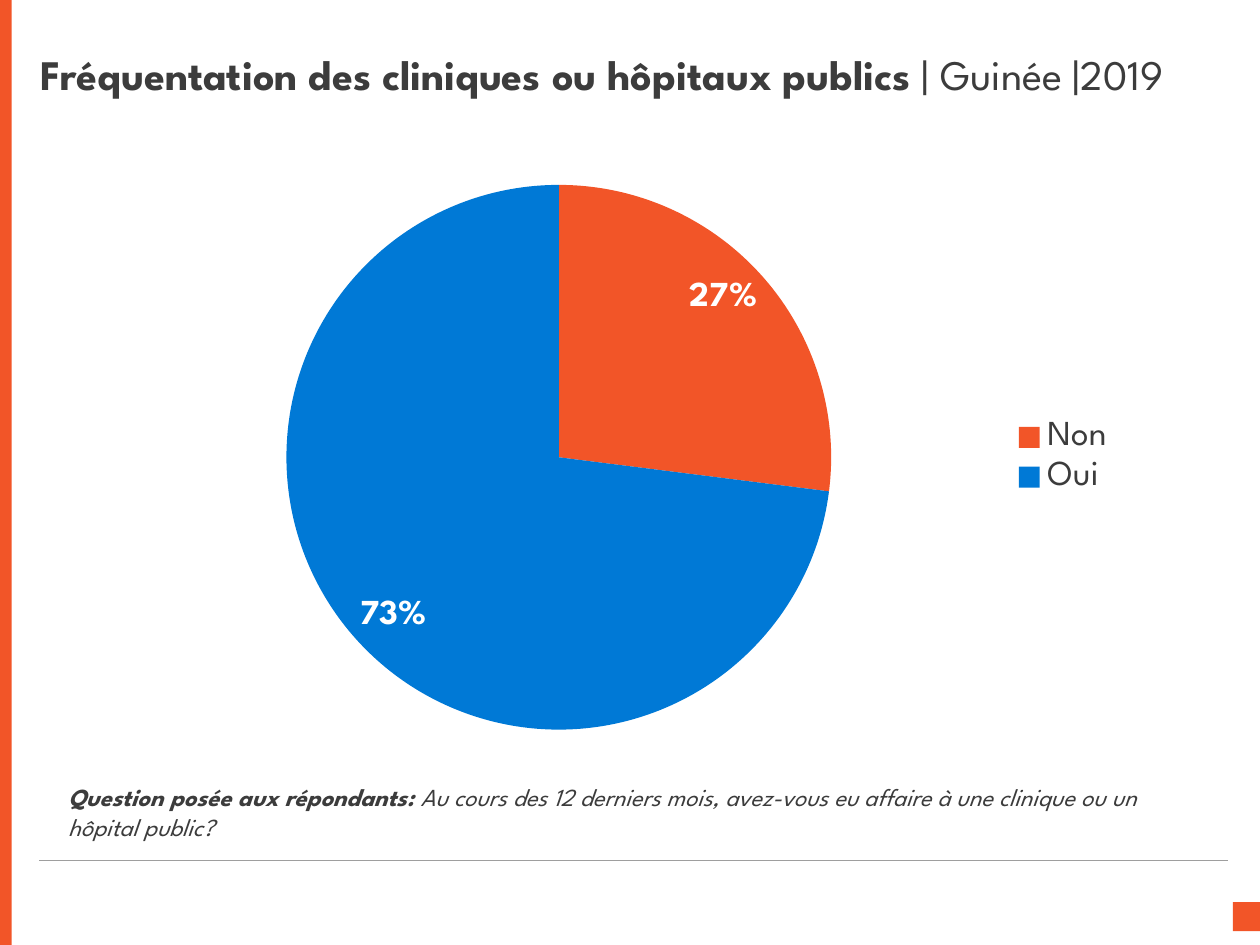
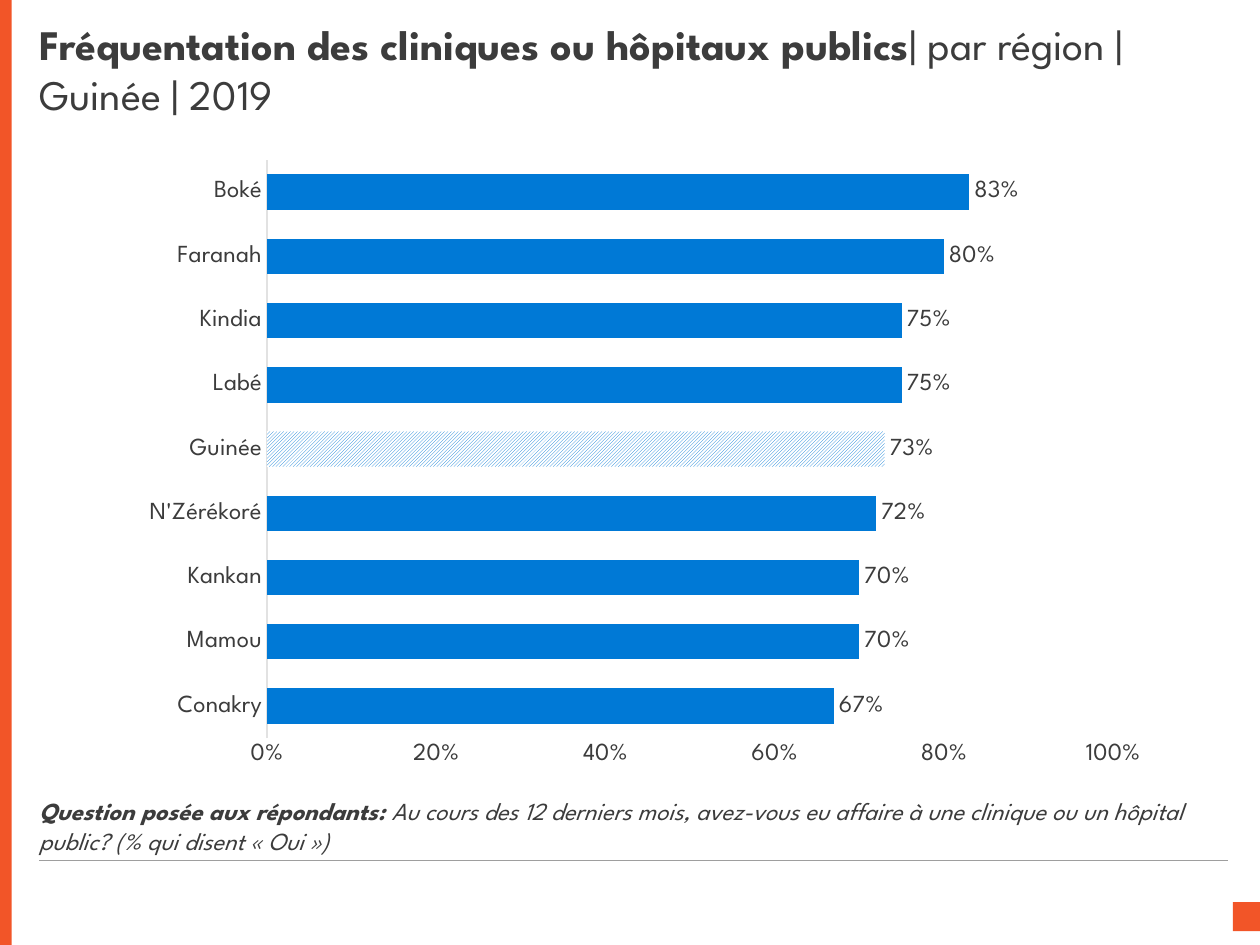
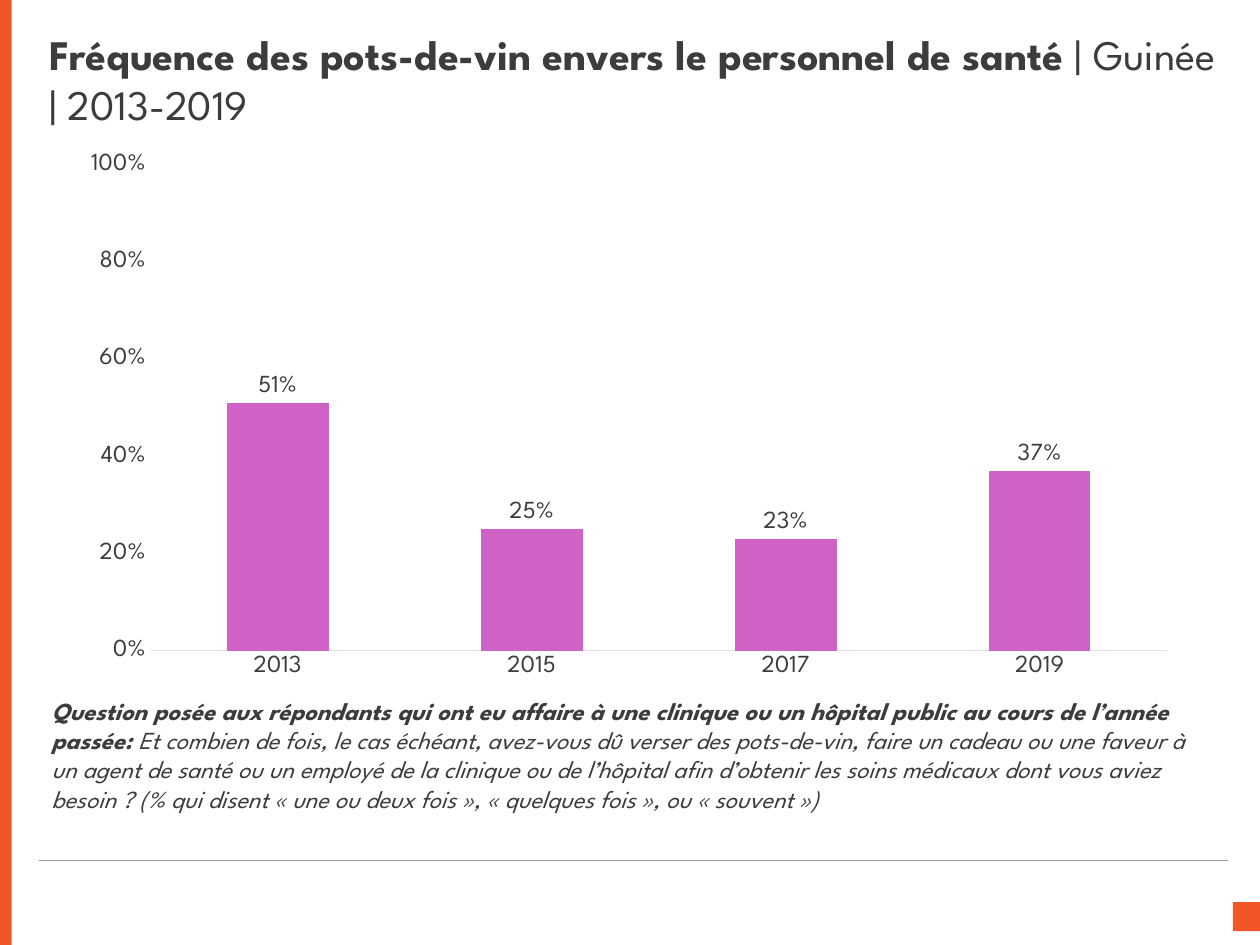
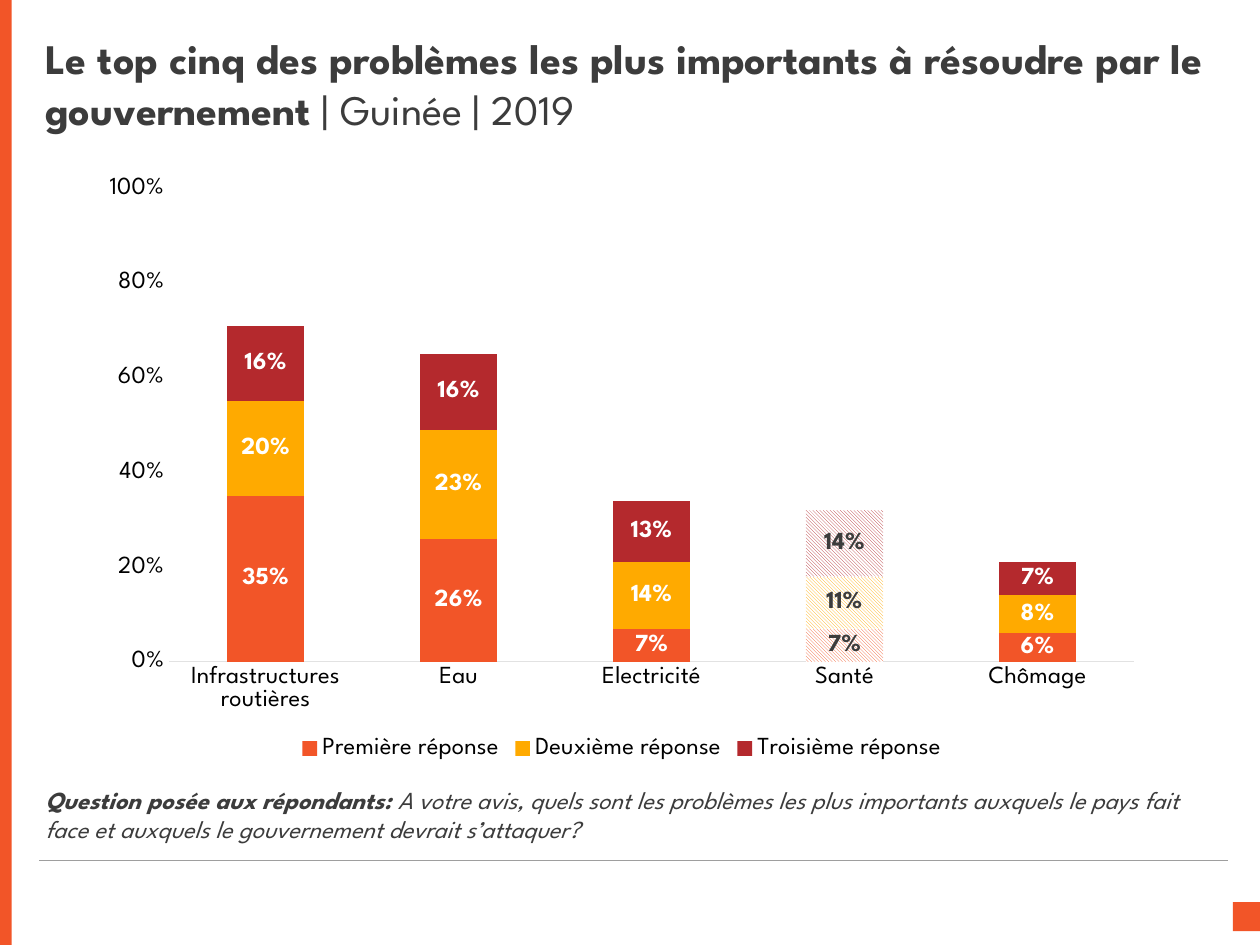
from lxml.etree import SubElement
from pptx import Presentation
from pptx.chart.data import CategoryChartData
from pptx.dml.color import RGBColor
from pptx.enum.chart import XL_CHART_TYPE, XL_LABEL_POSITION, XL_LEGEND_POSITION, XL_TICK_MARK
from pptx.enum.dml import MSO_PATTERN
from pptx.enum.shapes import MSO_CONNECTOR, MSO_SHAPE
from pptx.enum.text import MSO_ANCHOR, MSO_AUTO_SIZE, PP_ALIGN
from pptx.oxml import parse_xml
from pptx.oxml.ns import nsdecls, qn
from pptx.util import Inches, Pt

FONT = "League Spartan"
HUES = {
    "orange": "F25528",
    "blue": "0079D6",
    "pink": "D062C5",
    "gold": "FFAA00",
    "red": "B4292D",
    "ink": "3C3C3C",
    "black": "000000",
    "white": "FFFFFF",
    "rule": "9E9E9E",
    "axis": "E2E2E2",
}
WIDE, HIGH = Inches(10), Inches(7.5)
COLS, ROWS = 100, 75
ASK = "Question posée aux répondants: "


def hue(name):
    return RGBColor.from_string(HUES[name])


def grid(left, top, wide, high):
    col, row = WIDE / COLS, HIGH / ROWS
    return [round(n) for n in (left * col, top * row, wide * col, high * row)]


def style(font, size=14, color="ink", bold=False, slant=False):
    font.name, font.size = FONT, Pt(size)
    font.bold, font.italic = bold, slant
    font.color.rgb = hue(color)


def write(shape, box, lead, rest, anchor=MSO_ANCHOR.TOP, **form):
    shape.left, shape.top, shape.width, shape.height = grid(*box)
    frame = shape.text_frame
    frame.word_wrap, frame.auto_size = True, MSO_AUTO_SIZE.NONE
    frame.vertical_anchor = anchor
    para = frame.paragraphs[0]
    props = para._p.get_or_add_pPr()
    props.set("marL", "0")
    props.set("indent", "0")
    SubElement(props, qn("a:buNone"))
    para.alignment, para.line_spacing = PP_ALIGN.LEFT, 1.0
    para.space_before = Pt(0)
    for text, bold in ((lead, True), (rest, False)):
        run = para.add_run()
        run.text = text
        style(run.font, bold=bold, **form)


def trim(slide, layout):
    parts = []
    for box in ((97.85, 71.6, 2.2, 2.3), (0, 0, 0.93, ROWS)):
        band = slide.shapes.add_shape(MSO_SHAPE.RECTANGLE, *grid(*box))
        band.shadow.inherit = False
        band.fill.solid()
        band.fill.fore_color.rgb = hue("orange")
        band.line.fill.background()
        parts.append(band)
    left, top, wide, _ = grid(3.1, 68.3, 94.35, 0)
    rule = slide.shapes.add_connector(MSO_CONNECTOR.STRAIGHT, left + wide, top, left, top)
    rule.line.color.rgb, rule.line.width = hue("rule"), Pt(0.25)
    SubElement(rule._element.spPr, qn("a:effectLst"))
    for mark, part in enumerate(parts + [rule], 20):
        item = part._element
        item.xpath(".//p:cNvPr")[0].set("id", str(mark))
        layout.shapes._spTree.append(item)


def page(deck, head, ask):
    layout = deck.slide_layouts[1]
    slide = deck.slides.add_slide(layout)
    if len(deck.slides) == 1:
        trim(slide, layout)
    title, body = slide.placeholders
    write(title, *head, anchor=MSO_ANCHOR.MIDDLE, size=24)
    write(body, *ask, slant=True)
    return slide


def place(chart, **shares):
    area = chart._chartSpace.chart.plotArea
    for old in area.findall(qn("c:layout")):
        area.remove(old)
    marks = "".join(f'<c:{key} val="{val / 100:.3f}"/>' for key, val in shares.items())
    area.insert(0, parse_xml(
        f'<c:layout {nsdecls("c")}><c:manualLayout><c:layoutTarget val="inner"/>'
        f'<c:xMode val="edge"/><c:yMode val="edge"/>{marks}</c:manualLayout></c:layout>'))


def plot(slide, box, kind, cats, rows, area, color="ink"):
    data = CategoryChartData(number_format="0%")
    data.categories = cats
    for name, vals in rows:
        data.add_series(name, vals)
    chart = slide.shapes.add_chart(kind, *grid(*box), data).chart
    chart.has_title = chart.has_legend = False
    style(chart.font, color=color)
    place(chart, **dict(zip("xywh", area)))
    return chart


def label(series, spot, **form):
    tags = series.data_labels
    tags.show_value = True
    tags.number_format, tags.number_format_is_linked = "0%", False
    tags.position = spot
    style(tags.font, **form)


def legend(chart, spot, **form):
    chart.has_legend = True
    chart.legend.position = spot
    chart.legend.include_in_layout = False
    style(chart.legend.font, **form)


def tint(part, color):
    part.format.fill.solid()
    part.format.fill.fore_color.rgb = hue(color)


def hatch(point, color, pattern):
    fill = point.format.fill
    fill.patterned()
    fill.pattern = pattern
    fill.fore_color.rgb, fill.back_color.rgb = hue(color), hue("white")


def bars(slide, box, kind, cats, rows, area, gap, color="ink"):
    chart = plot(slide, box, kind, cats, rows, area, color)
    chart.plots[0].gap_width = gap
    chart.plots[0].vary_by_categories = False
    for axis in (chart.category_axis, chart.value_axis):
        axis.major_tick_mark = axis.minor_tick_mark = XL_TICK_MARK.NONE
        axis.has_major_gridlines = False
        style(axis.tick_labels.font, color=color)
    line = chart.category_axis.format.line
    line.color.rgb, line.width = hue("axis"), Pt(0.75)
    scale = chart.value_axis
    scale.format.line.fill.background()
    scale.minimum_scale, scale.maximum_scale, scale.major_unit = 0, 1, 0.2
    scale.tick_labels.number_format = "0%"
    scale.tick_labels.number_format_is_linked = False
    return chart


def visits(deck):
    slide = page(
        deck,
        ((2.2, 2.8, 95.5, 6.1), "Fréquentation des cliniques ou hôpitaux publics ", "| Guinée |2019"),
        ((4.4, 61.6, 90.6, 6.8), ASK,
         "Au cours des 12 derniers mois, avez-vous eu affaire à une clinique ou un hôpital public?"))
    chart = plot(slide, (8.8, 13.3, 80.8, 46), XL_CHART_TYPE.PIE, ["Non", "Oui"],
                 [("Series 1", (0.27, 0.73))], (17, 3, 54, 94))
    series = chart.plots[0].series[0]
    for spot, color in enumerate(("orange", "blue")):
        tint(series.points[spot], color)
    label(series, XL_LABEL_POSITION.INSIDE_END, size=20, color="white", bold=True)
    legend(chart, XL_LEGEND_POSITION.RIGHT, size=20)


def regions(deck):
    slide = page(
        deck,
        ((2.1, 2.4, 95.5, 6.1), "Fréquentation des cliniques ou hôpitaux publics",
         "| par région |Guinée | 2019"),
        ((2.1, 62.7, 95.5, 6.8), ASK,
         "Au cours des 12 derniers mois, avez-vous eu affaire à une clinique ou un hôpital "
         "public? (% qui disent « Oui »)"))
    cats = ["Conakry", "Mamou", "Kankan", "N'Zérékoré", "Guinée", "Labé", "Kindia", "Faranah", "Boké"]
    vals = (0.67, 0.7, 0.7, 0.72, 0.73, 0.75, 0.75, 0.8, 0.83)
    chart = bars(slide, (10.3, 11.7, 81.9, 50), XL_CHART_TYPE.BAR_CLUSTERED, cats,
                 [("Series 1", vals)], (13.3, 2, 82, 91.8), 82)
    series = chart.plots[0].series[0]
    tint(series, "blue")
    hatch(series.points[cats.index("Guinée")], "blue", MSO_PATTERN.DARK_UPWARD_DIAGONAL)
    label(series, XL_LABEL_POSITION.OUTSIDE_END)


def bribes(deck):
    slide = page(
        deck,
        ((2.9, 2.7, 95.5, 7.1), "Fréquence des pots-de-vin envers le personnel de santé ",
         "| Guinée | 2013-2019"),
        ((3.1, 54.7, 93.8, 11.8),
         "Question posée aux répondants qui ont eu affaire à une clinique ou un hôpital public "
         "au cours de l’année passée: ",
         "Et combien de fois, le cas échéant, avez-vous dû verser des pots-de-vin, faire un cadeau "
         "ou une faveur à un agent de santé ou un employé de la clinique ou de l’hôpital afin "
         "d’obtenir les soins médicaux dont vous aviez besoin ? (% qui disent « une ou deux fois », "
         "« quelques fois », ou « souvent »)"))
    chart = bars(slide, (5.4, 11.3, 88.8, 43.4), XL_CHART_TYPE.COLUMN_CLUSTERED,
                 ["2013", "2015", "2017", "2019"], [("Series 1", (0.51, 0.25, 0.23, 0.37))],
                 (7.4, 4, 90.8, 89), 150)
    series = chart.plots[0].series[0]
    tint(series, "pink")
    label(series, XL_LABEL_POSITION.OUTSIDE_END)


def issues(deck):
    slide = page(
        deck,
        ((2.6, 3, 95, 7.2),
         "Le top cinq des problèmes les plus importants à résoudre par le gouvernement ",
         "| Guinée | 2019"),
        ((2.6, 61.8, 95, 4.7), ASK,
         "A votre avis, quels sont les problèmes les plus importants auxquels le pays fait face "
         "et auxquels le gouvernement devrait s’attaquer?"))
    cats = ["Infrastructures routières", "Eau", "Electricité", "Santé", "Chômage"]
    rows = [
        ("Première réponse", (0.35, 0.26, 0.07, 0.07, 0.06)),
        ("Deuxième réponse", (0.2, 0.23, 0.14, 0.11, 0.08)),
        ("Troisième réponse", (0.16, 0.16, 0.13, 0.14, 0.07)),
    ]
    chart = bars(slide, (7, 13.2, 84.7, 47.5), XL_CHART_TYPE.COLUMN_STACKED, cats, rows,
                 (7.6, 3.7, 90.4, 79.1), 150, "black")
    chart.plots[0].overlap = 100
    legend(chart, XL_LEGEND_POSITION.BOTTOM, color="black")
    for series, color in zip(chart.plots[0].series, ("orange", "gold", "red")):
        tint(series, color)
        label(series, XL_LABEL_POSITION.CENTER, color="white", bold=True)
        point = series.points[cats.index("Santé")]
        hatch(point, color, MSO_PATTERN.DARK_DOWNWARD_DIAGONAL)
        style(point.data_label.font, bold=True)
        point.data_label.position = XL_LABEL_POSITION.CENTER


def main():
    deck = Presentation()
    deck.slide_width, deck.slide_height = WIDE, HIGH
    for build in (visits, regions, bribes, issues):
        build(deck)
    deck.save("out.pptx")


if __name__ == "__main__":
    main()
